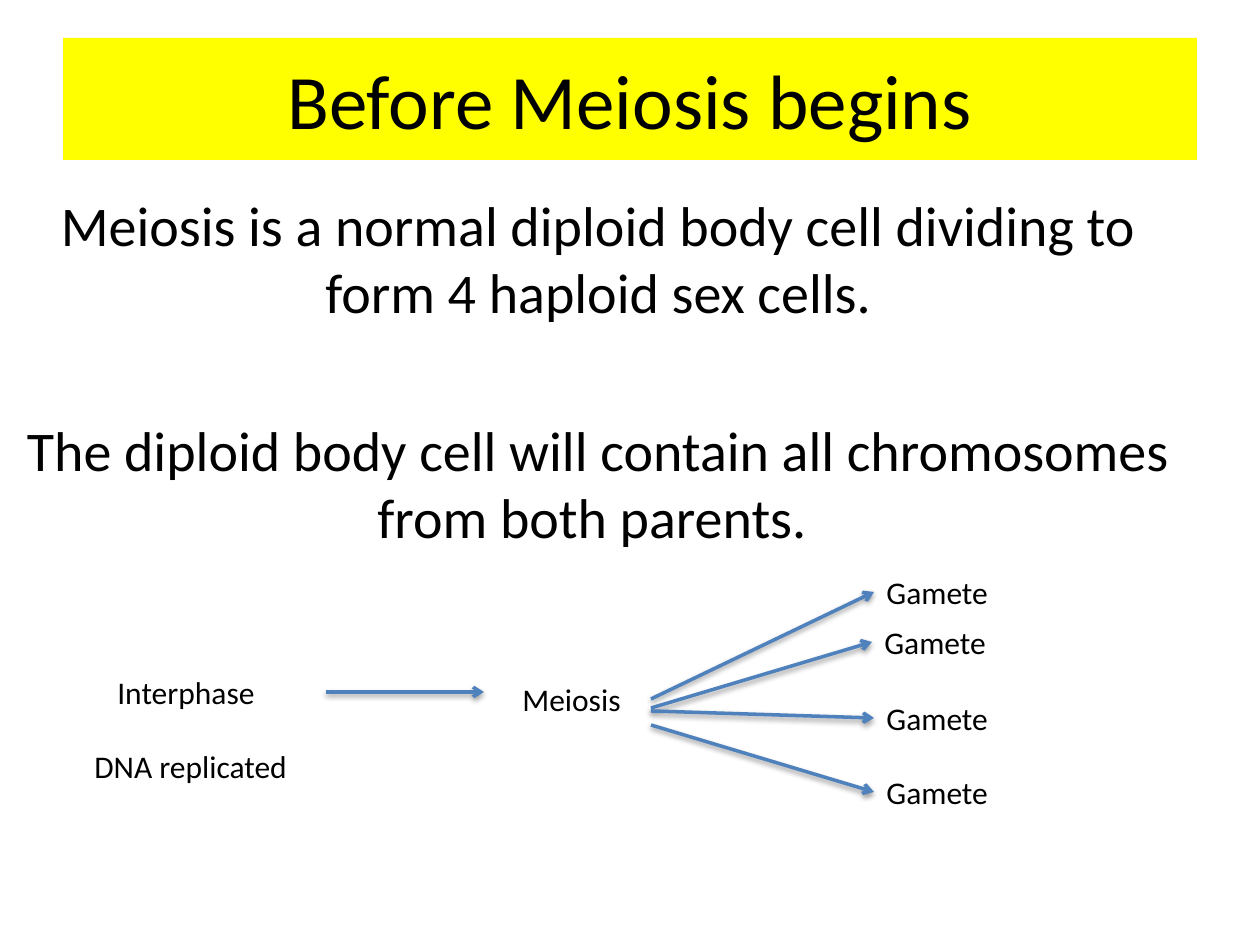
from lxml.etree import SubElement
from pptx import Presentation
from pptx.dml.color import RGBColor
from pptx.enum.shapes import MSO_CONNECTOR
from pptx.enum.text import MSO_ANCHOR, MSO_AUTO_SIZE, PP_ALIGN
from pptx.oxml.ns import qn
from pptx.util import Emu, Pt

SCALE = 914400 / 126  # EMU per px


def px(n):
    return Emu(round(n * SCALE))


def color(code):
    return RGBColor.from_string(code)


class Deck:
    font, ink, blue, yellow = "Calibri", "000000", "4F81BD", "FFFF00"

    def __init__(self, wide, high):
        self.prs = Presentation()
        self.prs.slide_width, self.prs.slide_height = px(wide), px(high)
        self.slide = self.prs.slides.add_slide(self.prs.slide_layouts[1])

    def place(self, shape, box):
        shape.left, shape.top, shape.width, shape.height = map(px, box)

    def style(self, para, size, align):
        para.alignment = align
        para.font.name, para.font.size = self.font, Pt(size)
        para.font.color.rgb = color(self.ink)

    def title(self, text, box):
        shape = self.slide.shapes.title
        self.place(shape, box)
        shape.fill.solid()
        shape.fill.fore_color.rgb = color(self.yellow)
        shape.text_frame.text = text
        shape.text_frame.vertical_anchor = MSO_ANCHOR.MIDDLE
        self.style(shape.text_frame.paragraphs[0], 44, PP_ALIGN.CENTER)

    def body(self, lines, box, gap):
        shape = self.slide.placeholders[1]
        self.place(shape, box)
        shape.text_frame.text = "\n".join(lines)
        for i, para in enumerate(shape.text_frame.paragraphs):
            self.style(para, 32, PP_ALIGN.CENTER)
            if i:
                para.space_before = Pt(gap)
            # No bullet and no indent
            props = para._p.get_or_add_pPr()
            props.set("marL", "0")
            props.set("indent", "0")
            SubElement(props, qn("a:buNone"))

    def label(self, text, left, top, wide):
        box = self.slide.shapes.add_textbox(*map(px, (left, top, wide, 50)))
        frame = box.text_frame
        frame.word_wrap = False
        frame.auto_size = MSO_AUTO_SIZE.SHAPE_TO_FIT_TEXT
        frame.text = text
        self.style(frame.paragraphs[0], 18, PP_ALIGN.LEFT)

    def arrow(self, start, end):
        # The theme's soft shadow is kept on arrows
        line = self.slide.shapes.add_connector(
            MSO_CONNECTOR.STRAIGHT, *map(px, start + end)).line
        line.color.rgb = color(self.blue)
        line.width = Pt(2)
        SubElement(line._get_or_add_ln(), qn("a:tailEnd"), type="arrow")


def main():
    deck = Deck(1260, 945)
    deck.title("Before Meiosis begins", (63, 38, 1134, 122))
    deck.body([
        "Meiosis is a normal diploid body cell dividing to form 4 haploid sex cells.",
        "The diploid body cell will contain all chromosomes from both parents. ",
    ], (0, 184, 1197, 784), gap=52)

    # Stages before the split
    deck.label("Interphase", 105, 667, 188)
    deck.label("DNA replicated", 82, 741, 257)
    deck.label("Meiosis", 510, 674, 141)
    deck.arrow((326, 692), (484, 692))

    # Four gametes: label left and top, arrow start height
    for left, top, start in [(874, 567, 699), (872, 617, 708),
                             (874, 693, 711), (874, 767, 725)]:
        deck.label("Gamete", left, top, 144)
        deck.arrow((651, start), (left, top + 25))

    deck.prs.save("out.pptx")


if __name__ == "__main__":
    main()
